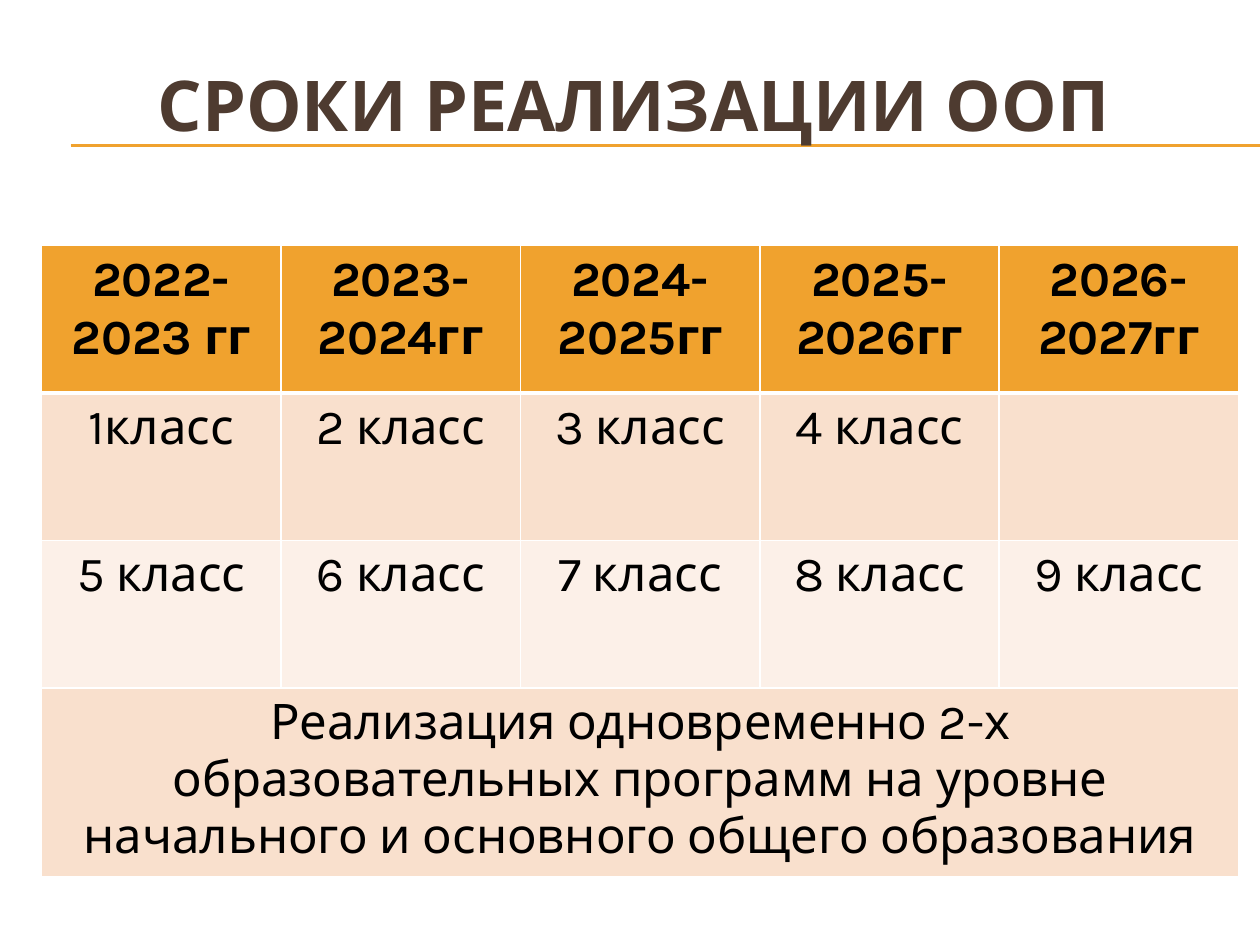
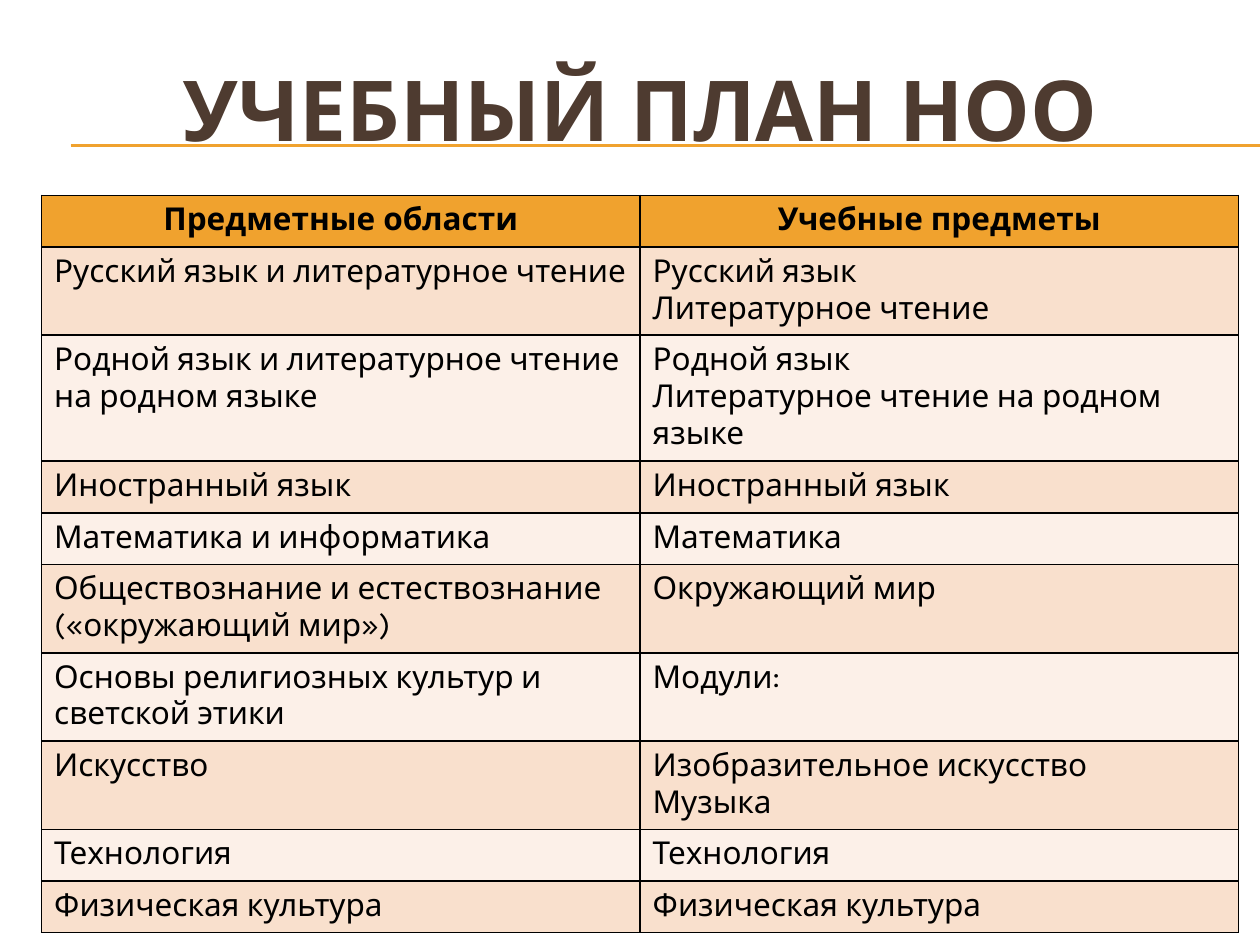
from lxml import etree
from pptx import Presentation
from pptx.dml.color import RGBColor
from pptx.enum.shapes import MSO_CONNECTOR
from pptx.enum.text import MSO_ANCHOR, PP_ALIGN
from pptx.oxml.ns import qn
from pptx.util import Inches, Pt

STRAIGHT = MSO_CONNECTOR.STRAIGHT
MIDDLE = MSO_ANCHOR.MIDDLE
CENTER, LEFT = PP_ALIGN.CENTER, PP_ALIGN.LEFT

# Content: a newline starts a new paragraph
TERMS = [
    ["2022-2023 гг", "2023-2024гг", "2024-2025гг", "2025-2026гг", "2026-2027гг"],
    ["1класс", "2 класс", "3 класс", "4 класс", ""],
    ["5 класс", "6 класс", "7 класс", "8 класс", "9 класс"],
    ["Реализация одновременно 2-х образовательных программ на уровне "
     "начального и основного общего образования"],
]
PLAN = [
    ["Предметные области", "Учебные предметы"],
    ["Русский язык и литературное чтение", "Русский язык\nЛитературное чтение"],
    ["Родной язык и литературное чтение на родном языке",
     "Родной язык\nЛитературное чтение на родном языке"],
    ["Иностранный язык", "Иностранный язык"],
    ["Математика и информатика", "Математика"],
    ["Обществознание и естествознание («окружающий мир»)", "Окружающий мир"],
    ["Основы религиозных культур и светской этики", "Модули:"],
    ["Искусство", "Изобразительное искусство\nМузыка"],
    ["Технология", "Технология"],
    ["Физическая культура", "Физическая культура"],
]
SLIDES = [
    dict(title="СРОКИ РЕАЛИЗАЦИИ ООП", box=(0.23, 0.23, 9.6, 1.18), size=40,
         rows=TERMS, top=1.95, heights=[1.17] * 3 + [0.9], font=28,
         align=CENTER, edge="white", rule=3),
    dict(title="УЧЕБНЫЙ ПЛАН НОО", box=(0.33, 0.29, 9.5, 1.13), size=48,
         rows=PLAN, top=1.55, heights=[0.41] * len(PLAN), font=18,
         align=LEFT, edge="black", rule=1),
]

# Shared style
COLORS = dict(gold="F0A22E", brown="4E3B30", peach="F9E0CD", cream="FCF0E8",
              white="FFFFFF", black="000000")
FONT = "Karla"
WIDE, HIGH = 10, 7.5
SIDE, SPAN = 0.33, 9.5
LINES = (1.15, 1.16)


def color(name):
    return RGBColor.from_string(COLORS[name])


def style(frame, size, tint, bold, align):
    for para in frame.paragraphs:
        para.alignment = align
        for run in para.runs:
            font = run.font
            font.name, font.size, font.bold = FONT, Pt(size), bold
            font.color.rgb = color(tint)


def add_lines(slide):
    for y in LINES:
        line = slide.shapes.add_connector(
            STRAIGHT, Inches(0.56), Inches(y), Inches(WIDE), Inches(y))
        line.line.color.rgb = color("gold")
        line.line.width = Pt(0.75)
        etree.SubElement(line._element.spPr, qn("a:effectLst"))


def add_title(slide, data):
    box = slide.shapes.add_textbox(*map(Inches, data["box"]))
    frame = box.text_frame
    frame.word_wrap = True
    frame.vertical_anchor = MIDDLE
    frame.text = data["title"]
    style(frame, data["size"], "brown", True, CENTER)


def set_edges(cell, tint, widths):
    props = cell._tc.get_or_add_tcPr()
    for spot, (side, width) in enumerate(widths.items()):
        edge = etree.Element(qn("a:ln" + side), w=str(Pt(width)))
        fill = etree.SubElement(edge, qn("a:solidFill"))
        etree.SubElement(fill, qn("a:srgbClr"), val=COLORS[tint])
        props.insert(spot, edge)


def add_grid(slide, data):
    rows, heights = data["rows"], data["heights"]
    count = len(rows[0])
    table = slide.shapes.add_table(
        len(rows), count, Inches(SIDE), Inches(data["top"]),
        Inches(SPAN), Inches(sum(heights))).table
    table.first_row = table.horz_banding = False
    for col in table.columns:
        col.width = Inches(SPAN / count)
    for r, texts in enumerate(rows):
        table.rows[r].height = Inches(heights[r])
        head = r == 0
        band = "gold" if head else "peach" if r % 2 else "cream"
        widths = dict(L=1, R=1, T=data["rule"] if r == 1 else 1,
                      B=data["rule"] if head else 1)
        for c in range(count):
            cell = table.cell(r, c)
            cell.fill.solid()
            cell.fill.fore_color.rgb = color(band)
            set_edges(cell, data["edge"], widths)
            if c < len(texts):
                cell.text_frame.text = texts[c]
                style(cell.text_frame, data["font"], "black", head,
                      CENTER if head else data["align"])
        # A lone text fills the whole row
        if len(texts) == 1:
            table.cell(r, 0).merge(table.cell(r, count - 1))


def main():
    deck = Presentation()
    deck.slide_width, deck.slide_height = Inches(WIDE), Inches(HIGH)
    for data in SLIDES:
        slide = deck.slides.add_slide(deck.slide_layouts[6])
        add_lines(slide)
        add_title(slide, data)
        add_grid(slide, data)
    deck.save("out.pptx")


if __name__ == "__main__":
    main()
